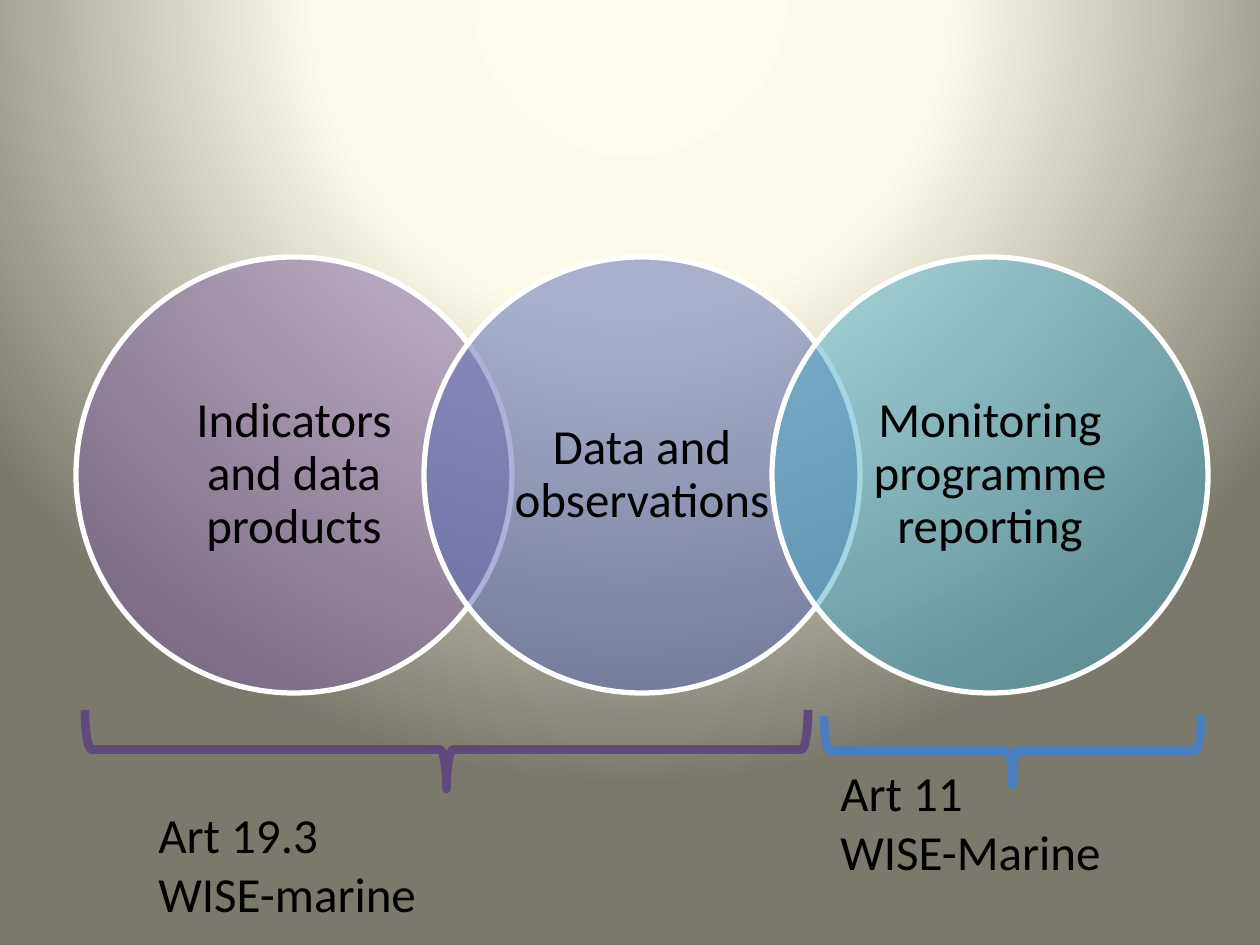
import pptx
import pptx.util
import pptx.oxml
import pptx.oxml.ns
import pptx.dml.color
import pptx.enum.shapes
import pptx.enum.text

RGB = pptx.dml.color.RGBColor
KIND = pptx.enum.shapes.MSO_SHAPE
ALIGN = pptx.enum.text.PP_ALIGN
ANCHOR = pptx.enum.text.MSO_ANCHOR

BLACK = RGB(0x00, 0x00, 0x00)
WHITE = RGB(0xFF, 0xFF, 0xFF)
PURPLE = RGB(0x80, 0x64, 0xA2)
INDIGO = RGB(0x57, 0x67, 0xB4)
TEAL = RGB(0x4B, 0xAC, 0xC6)
PLUM = RGB(0x60, 0x4A, 0x7B)
BLUE = RGB(0x4B, 0x7E, 0xBC)
CREAM = RGB(0xFE, 0xFC, 0xEE)
IVORY = RGB(0xFD, 0xFA, 0xEA)
OLIVE = RGB(0x7B, 0x79, 0x6B)

WIDTH, HEIGHT = 1260, 945
LEFT, TOP, SIZE, STEP = 76, 257, 436, 348
CIRCLES = [
    ("Indicators and data products", PURPLE),
    ("Data and observations", INDIGO),
    ("Monitoring programme reporting", TEAL),
]
BRACES = [
    ((407, 388, 79, 723), PLUM),
    ((978, 562, 69, 377), BLUE),
]
LABELS = [
    (("Art 19.3", "WISE-marine"), (146, 798, 286, 131)),
    (("Art 11", "WISE-Marine"), (828, 756, 289, 131)),
]
STOPS = [(0, CREAM), (40, IVORY), (100, OLIVE)]


def px(n):
    return pptx.util.Emu(n * 914400 // 126)


def xml(body):
    return pptx.oxml.parse_xml(body.replace(">", f" {pptx.oxml.ns.nsdecls('a')}>", 1))


def write(frame, lines, align=ALIGN.LEFT, space=None, wrap=True):
    frame.word_wrap = wrap
    for i, line in enumerate(lines):
        para = frame.add_paragraph() if i else frame.paragraphs[0]
        para.alignment = align
        para.line_spacing = space
        run = para.add_run()
        run.text = line
        run.font.size = pptx.util.Pt(28)
        run.font.name = "Calibri"
        run.font.color.rgb = BLACK


def shape(slide, kind, box, line, weight):
    item = slide.shapes.add_shape(kind, *map(px, box))
    item.shadow.inherit = False
    item.line.color.rgb = line
    item.line.width = pptx.util.Pt(weight)
    return item


def backdrop(slide):
    slide.background.fill.gradient()
    old = slide.element.xpath(".//p:bgPr/a:gradFill")[0]
    stops = "".join(
        f'<a:gs pos="{at * 1000}"><a:srgbClr val="{tone}"/></a:gs>' for at, tone in STOPS
    )
    new = xml(
        f'<a:gradFill rotWithShape="1"><a:gsLst>{stops}</a:gsLst><a:path path="circle">'
        '<a:fillToRect l="50000" t="-80000" r="50000" b="180000"/></a:path></a:gradFill>'
    )
    old.getparent().replace(old, new)


def circle(slide, index, text, tone):
    item = shape(slide, KIND.OVAL, (LEFT + index * STEP, TOP, SIZE, SIZE), WHITE, 3)
    item.fill.solid()
    item.fill.fore_color.rgb = tone
    fill = item.element.xpath("./p:spPr/a:solidFill/a:srgbClr")[0]
    fill.append(xml('<a:alpha val="50000"></a:alpha>'))
    frame = item.text_frame
    frame.margin_left = frame.margin_right = px(24)
    frame.margin_top = frame.margin_bottom = px(5)
    frame.vertical_anchor = ANCHOR.MIDDLE
    write(frame, [text], align=ALIGN.CENTER, space=0.9)


def main():
    deck = pptx.Presentation()
    deck.slide_width, deck.slide_height = px(WIDTH), px(HEIGHT)
    slide = deck.slides.add_slide(deck.slide_layouts[6])
    backdrop(slide)
    for index, (text, tone) in enumerate(CIRCLES):
        circle(slide, index, text, tone)
    for (lines, box), (span, tone) in zip(LABELS, BRACES):
        label = slide.shapes.add_textbox(*map(px, box))
        write(label.text_frame, lines, wrap=False)
        brace = shape(slide, KIND.RIGHT_BRACE, span, tone, 5)
        brace.fill.background()
        brace.rotation = 90
    deck.save("out.pptx")


if __name__ == "__main__":
    main()
